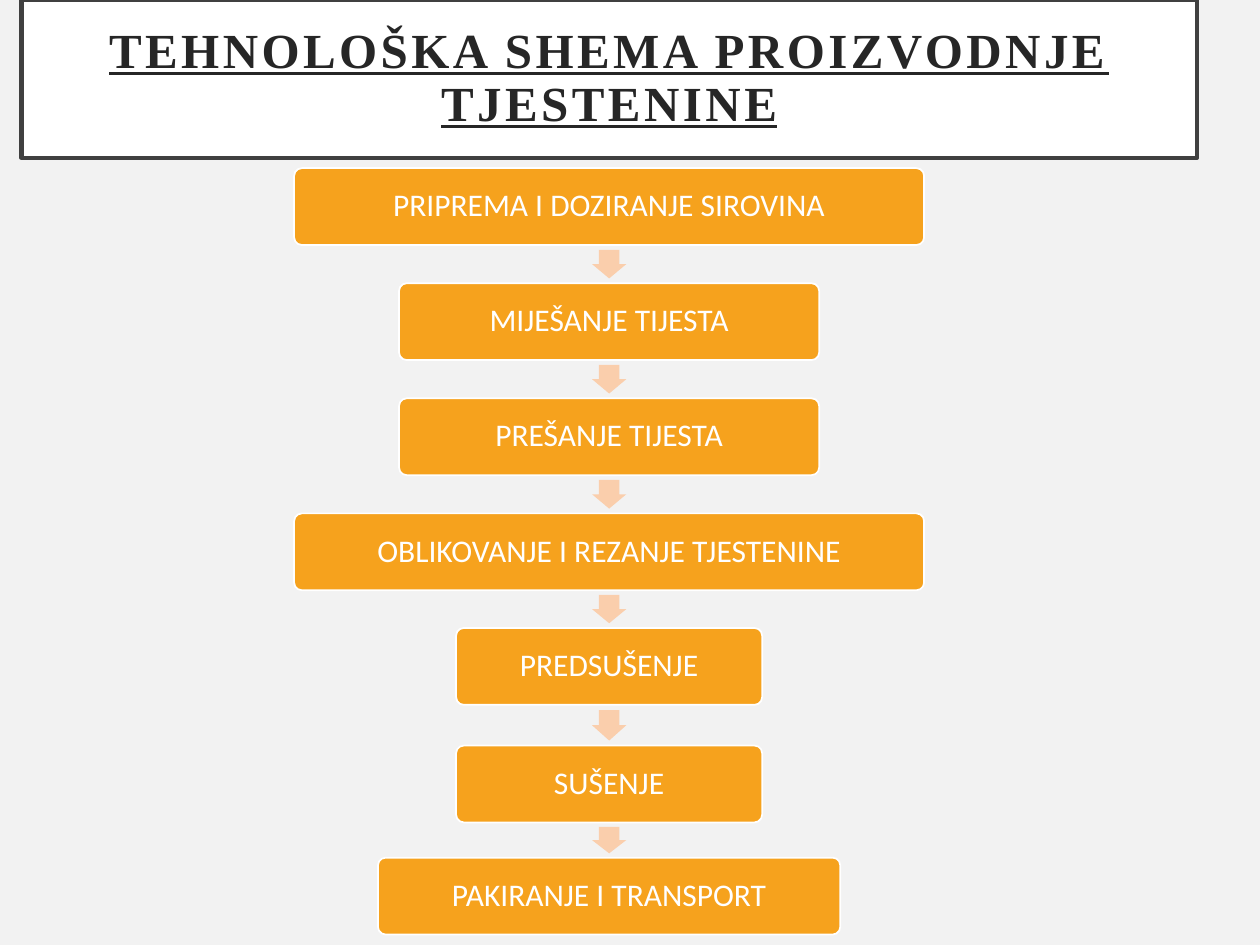
import pptx
import pptx.dml.color
import pptx.enum.shapes
import pptx.enum.text
import pptx.util

Cm = pptx.util.Cm
Pt = pptx.util.Pt
RGBColor = pptx.dml.color.RGBColor
MSO_SHAPE = pptx.enum.shapes.MSO_SHAPE

BACKGROUND = RGBColor(0xF2, 0xF2, 0xF2)
WHITE = RGBColor(0xFF, 0xFF, 0xFF)
FRAME = RGBColor(0x40, 0x40, 0x40)
TITLE_INK = RGBColor(0x26, 0x26, 0x26)
ORANGE = RGBColor(0xF6, 0xA2, 0x1D)
PEACH = RGBColor(0xFA, 0xCE, 0xAC)

TITLE_FONT = {"name": "Times New Roman", "size": Pt(28), "bold": True, "underline": True}
STEP_FONT = {"name": "Calibri", "size": Pt(18)}

# All lengths in centimetres
CENTRE = 12.28
STEP_HEIGHT = 1.55
ARROW_SPAN = 0.69
WIDE, MEDIUM, NARROW = 12.7, 8.47, 6.17

# Wording, top and width of each production step
STEPS = [
    ("PRIPREMA I DOZIRANJE SIROVINA", 3.39, WIDE),
    ("MIJEŠANJE TIJESTA", 5.71, MEDIUM),
    ("PREŠANJE TIJESTA", 8.03, MEDIUM),
    ("OBLIKOVANJE I REZANJE TJESTENINE", 10.35, WIDE),
    ("PREDSUŠENJE", 12.66, NARROW),
    ("SUŠENJE", 15.03, NARROW),
    ("PAKIRANJE I TRANSPORT", 17.29, 9.32),
]


class FlowSlide:
    """Holds the current slide and the style of its parts."""

    def __init__(self, deck):
        self.slide = deck.slides.add_slide(deck.slide_layouts[5])
        fill = self.slide.background.fill
        fill.solid()
        fill.fore_color.rgb = BACKGROUND

    def paint(self, part, fill, line=None, weight=1):
        part.fill.solid()
        part.fill.fore_color.rgb = fill
        if line is None:
            part.line.fill.background()
        else:
            part.line.color.rgb = line
            part.line.width = Pt(weight)

    def label(self, part, wording, font, ink, inset, tracking=0):
        frame = part.text_frame
        layout = {
            "word_wrap": True,
            "auto_size": pptx.enum.text.MSO_AUTO_SIZE.NONE,
            "vertical_anchor": pptx.enum.text.MSO_ANCHOR.MIDDLE,
        }
        layout.update({f"margin_{side}": Cm(inset) for side in ("left", "right", "top", "bottom")})
        for name, value in layout.items():
            setattr(frame, name, value)
        paragraph = frame.paragraphs[0]
        paragraph.alignment = pptx.enum.text.PP_ALIGN.CENTER
        paragraph.line_spacing = 0.9
        run = paragraph.add_run()
        run.text = wording
        for name, value in font.items():
            setattr(run.font, name, value)
        run.font.color.rgb = ink
        if tracking:
            run._r.get_or_add_rPr().set("spc", str(tracking * 100))

    def title(self, wording):
        heading = self.slide.shapes.title
        place = {"left": 0.43, "top": 0, "width": 23.7, "height": 3.18}
        for name, value in place.items():
            setattr(heading, name, Cm(value))
        self.paint(heading, WHITE, FRAME, 2.5)
        self.label(heading, wording, TITLE_FONT, TITLE_INK, 0.5, tracking=2)

    def step(self, wording, top, width):
        box = self.slide.shapes.add_shape(
            MSO_SHAPE.ROUNDED_RECTANGLE,
            Cm(CENTRE - width / 2), Cm(top), Cm(width), Cm(STEP_HEIGHT))
        box.adjustments[0] = 0.1
        box.shadow.inherit = False
        self.paint(box, ORANGE, WHITE)
        self.label(box, wording, STEP_FONT, WHITE, 0.22)

    def arrow(self, gap_top, gap_bottom):
        """Downward arrow filling three quarters of the gap between two steps."""
        length = 0.75 * (gap_bottom - gap_top)
        middle = (gap_top + gap_bottom) / 2
        arrow = self.slide.shapes.add_shape(
            MSO_SHAPE.RIGHT_ARROW,
            Cm(CENTRE - length / 2), Cm(middle - ARROW_SPAN / 2), Cm(length), Cm(ARROW_SPAN))
        arrow.rotation = 90
        arrow.adjustments[0] = 0.6
        arrow.adjustments[1] = 0.5
        arrow.shadow.inherit = False
        self.paint(arrow, PEACH)


def main():
    deck = pptx.Presentation()
    deck.slide_width = Cm(25.4)
    deck.slide_height = Cm(19.05)
    flow = FlowSlide(deck)

    # Heading
    flow.title("TEHNOLOŠKA SHEMA PROIZVODNJE TJESTENINE")

    # Production steps, each after the first led in by an arrow
    previous_bottom = None
    for wording, top, width in STEPS:
        if previous_bottom is not None:
            flow.arrow(previous_bottom, top)
        flow.step(wording, top, width)
        previous_bottom = top + STEP_HEIGHT

    deck.save("out.pptx")


if __name__ == "__main__":
    main()
